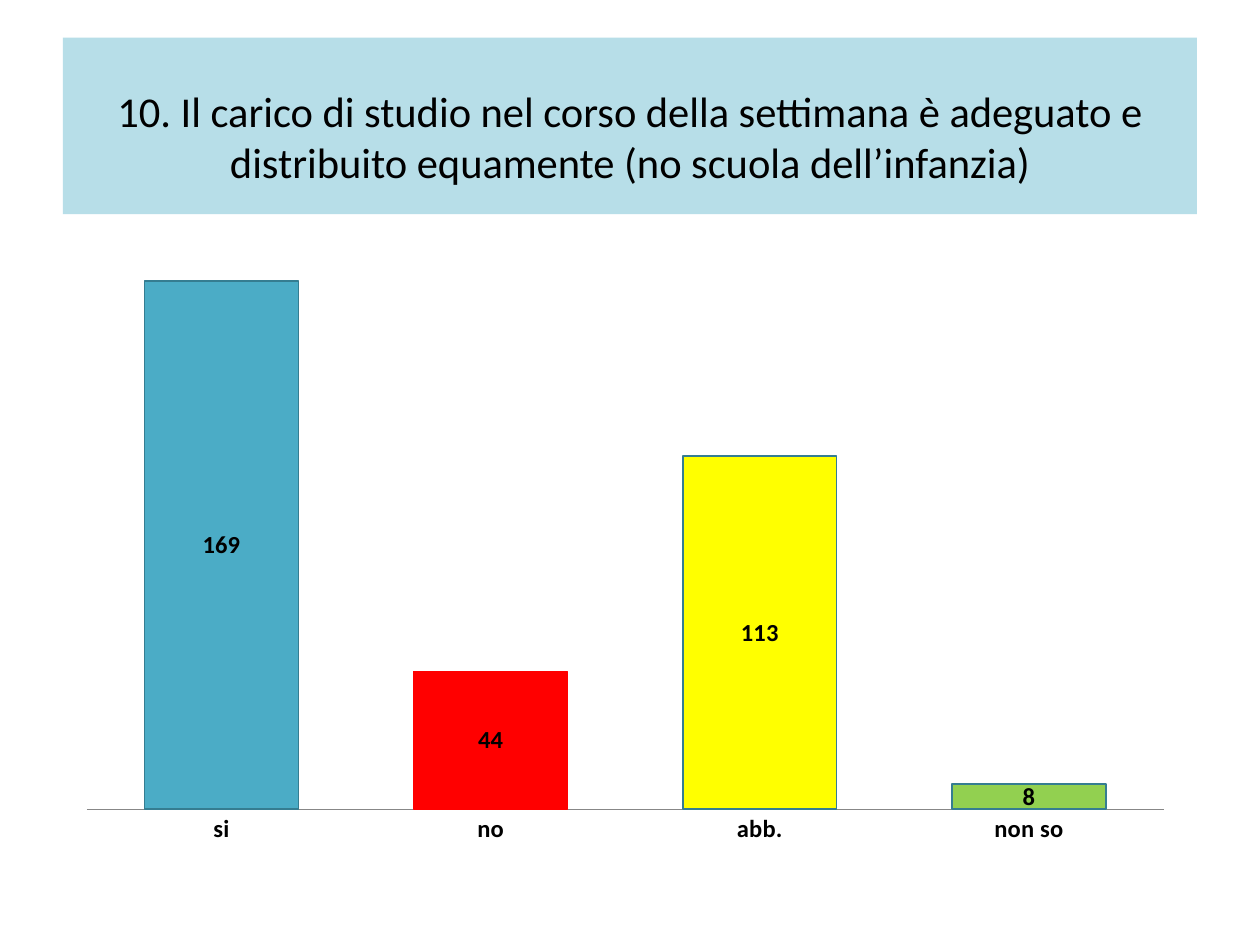
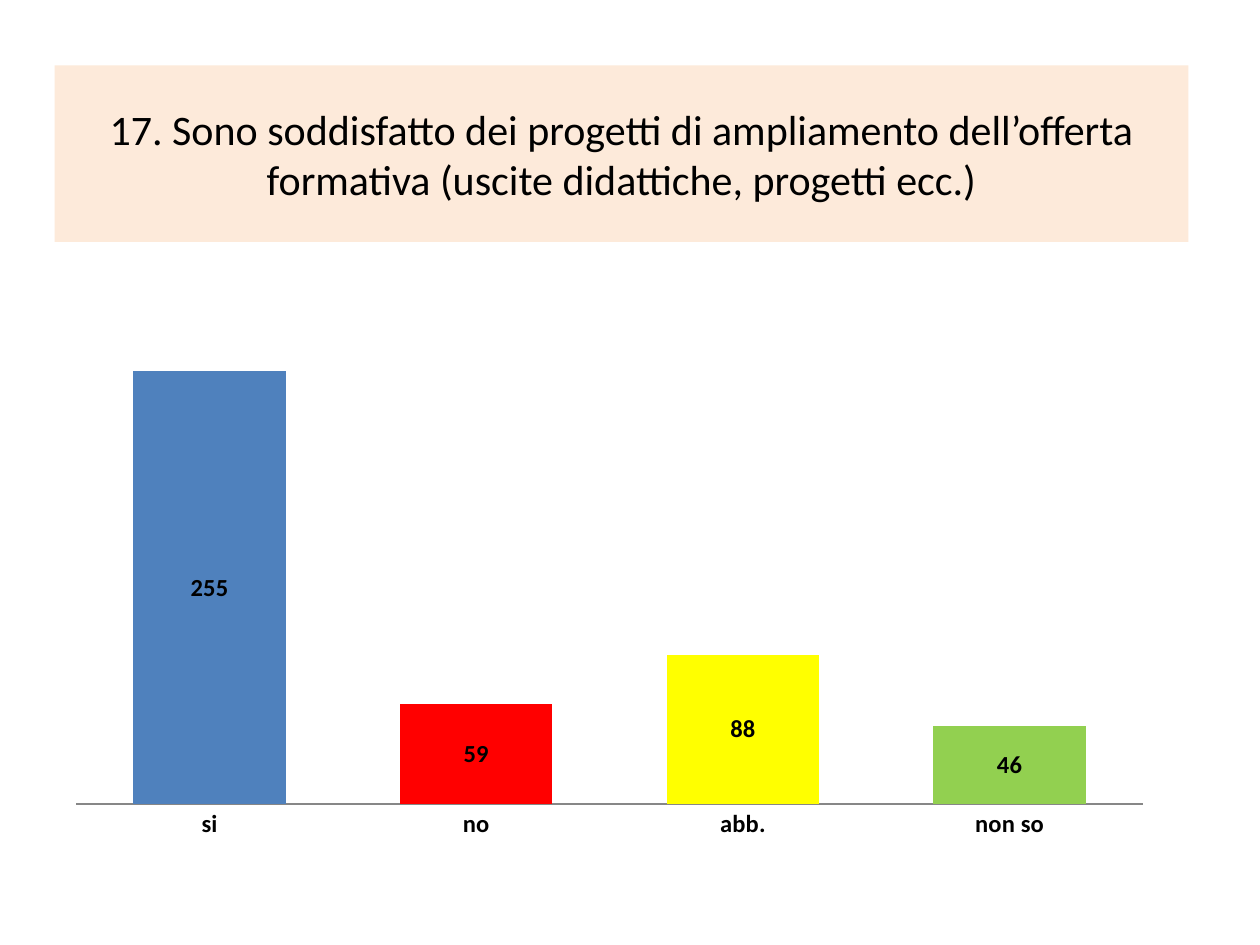
from dataclasses import dataclass

from lxml import etree
from pptx import Presentation
from pptx.chart.data import CategoryChartData
from pptx.dml.color import RGBColor
from pptx.enum.chart import XL_CHART_TYPE, XL_LABEL_POSITION, XL_TICK_LABEL_POSITION, XL_TICK_MARK
from pptx.enum.text import MSO_ANCHOR, PP_ALIGN
from pptx.oxml.ns import qn
from pptx.slide import Slide
from pptx.util import Cm, Pt

STACKED = XL_CHART_TYPE.COLUMN_STACKED
MIDDLE = XL_LABEL_POSITION.CENTER
NO_TICK = XL_TICK_MARK.NONE
NO_LABEL = XL_TICK_LABEL_POSITION.NONE
CENTER = PP_ALIGN.CENTER
ANCHOR = MSO_ANCHOR.MIDDLE

FACE = "Calibri"
BLACK = "000000"
GRAY = "878787"
RED, YELLOW, GREEN = "FF0000", "FFFF00", "92D050"
ANSWERS = ("si", "no", "abb.", "non so")
PLOT = {"x": 0.02, "y": 0.02, "w": 0.96, "h": 0.9}


@dataclass(frozen=True)
class Box:
    """Place and size in centimetres."""
    left: float
    top: float
    width: float
    height: float

    def lengths(self) -> tuple[Cm, ...]:
        return tuple(Cm(n) for n in (self.left, self.top, self.width, self.height))


@dataclass(frozen=True)
class Survey:
    """One question with its answers; inset is the space above the title."""
    title: str
    size: float
    band: Box
    tint: str
    inset: float
    area: Box
    votes: tuple[int, ...]
    limit: int
    first: str
    edges: tuple[str, ...] = ()
    rule: float = 0.75


SURVEYS = (
    Survey(
        "10.\u00a0Il carico di studio nel corso della settimana è adeguato e "
        "distribuito equamente (no scuola dell’infanzia)",
        24.3, Box(1.27, 0.76, 22.86, 3.56), "B7DEE8", 0.51,
        Box(1.3, 4.72, 22.61, 12.6), (169, 44, 113, 8), 180,
        "4BACC6", ("357D91", RED, "357D91", "357D91"), 0.5),
    Survey(
        "17. Sono soddisfatto dei progetti di ampliamento dell’offerta "
        "formativa (uscite didattiche, progetti ecc.)",
        24, Box(1.1, 1.32, 22.86, 3.56), "FDEADA", 0.13,
        Box(1.09, 5.72, 22.4, 11.4), (255, 59, 88, 46), 300, "4F81BD"),
)


def color(code: str) -> RGBColor:
    return RGBColor.from_string(code)


def style(font, size: float, bold: bool = False) -> None:
    font.name, font.size, font.bold = FACE, Pt(size), bold
    font.color.rgb = color(BLACK)


def paint(fill, code: str) -> None:
    fill.solid()
    fill.fore_color.rgb = color(code)


def add_band(slide: Slide, item: Survey) -> None:
    box = slide.shapes.add_textbox(*item.band.lengths())
    paint(box.fill, item.tint)
    frame = box.text_frame
    frame.word_wrap = True
    frame.vertical_anchor = ANCHOR
    frame.margin_top = Cm(item.inset)
    para = frame.paragraphs[0]
    para.alignment = CENTER
    run = para.add_run()
    run.text = item.title
    style(run.font, item.size)


def fix_plot(chart) -> None:
    """Give the inner plot area a fixed share of the chart."""
    area = chart.element.find(".//" + qn("c:plotArea"))
    old = area.find(qn("c:layout"))
    if old is not None:
        area.remove(old)
    layout = etree.Element(qn("c:layout"))
    area.insert(0, layout)
    manual = etree.SubElement(layout, qn("c:manualLayout"))
    rules = {"layoutTarget": "inner", "xMode": "edge", "yMode": "edge"} | PLOT
    for tag, value in rules.items():
        etree.SubElement(manual, qn("c:" + tag)).set("val", str(value))


def add_bars(slide: Slide, item: Survey) -> None:
    data = CategoryChartData()
    data.categories = ANSWERS
    data.add_series("Series 1", item.votes)
    chart = slide.shapes.add_chart(STACKED, *item.area.lengths(), data).chart
    chart.has_title = False
    chart.has_legend = False
    style(chart.font, 10)
    fix_plot(chart)

    scale = chart.value_axis
    scale.minimum_scale, scale.maximum_scale = 0, item.limit
    scale.has_major_gridlines = False
    scale.major_tick_mark = NO_TICK
    scale.tick_label_position = NO_LABEL
    scale.visible = False
    base = chart.category_axis
    base.major_tick_mark = NO_TICK
    base.format.line.color.rgb = color(GRAY)
    base.format.line.width = Pt(item.rule)
    style(base.tick_labels.font, 14, True)

    plot = chart.plots[0]
    plot.gap_width, plot.overlap = 75, 100
    plot.vary_by_categories = False
    series = plot.series[0]
    paint(series.format.fill, item.first)
    for i, code in enumerate((item.first, RED, YELLOW, GREEN)):
        look = series.points[i].format
        paint(look.fill, code)
        if item.edges:
            look.line.color.rgb = color(item.edges[i])
            look.line.width = Pt(0.75)
        else:
            look.line.fill.background()
    labels = series.data_labels
    labels.show_value = True
    labels.position = MIDDLE
    style(labels.font, 14, True)


def main() -> None:
    deck = Presentation()
    deck.slide_width, deck.slide_height = Cm(25.4), Cm(19.05)
    for item in SURVEYS:
        slide = deck.slides.add_slide(deck.slide_layouts[6])
        add_band(slide, item)
        add_bars(slide, item)
    deck.save("out.pptx")


if __name__ == "__main__":
    main()
